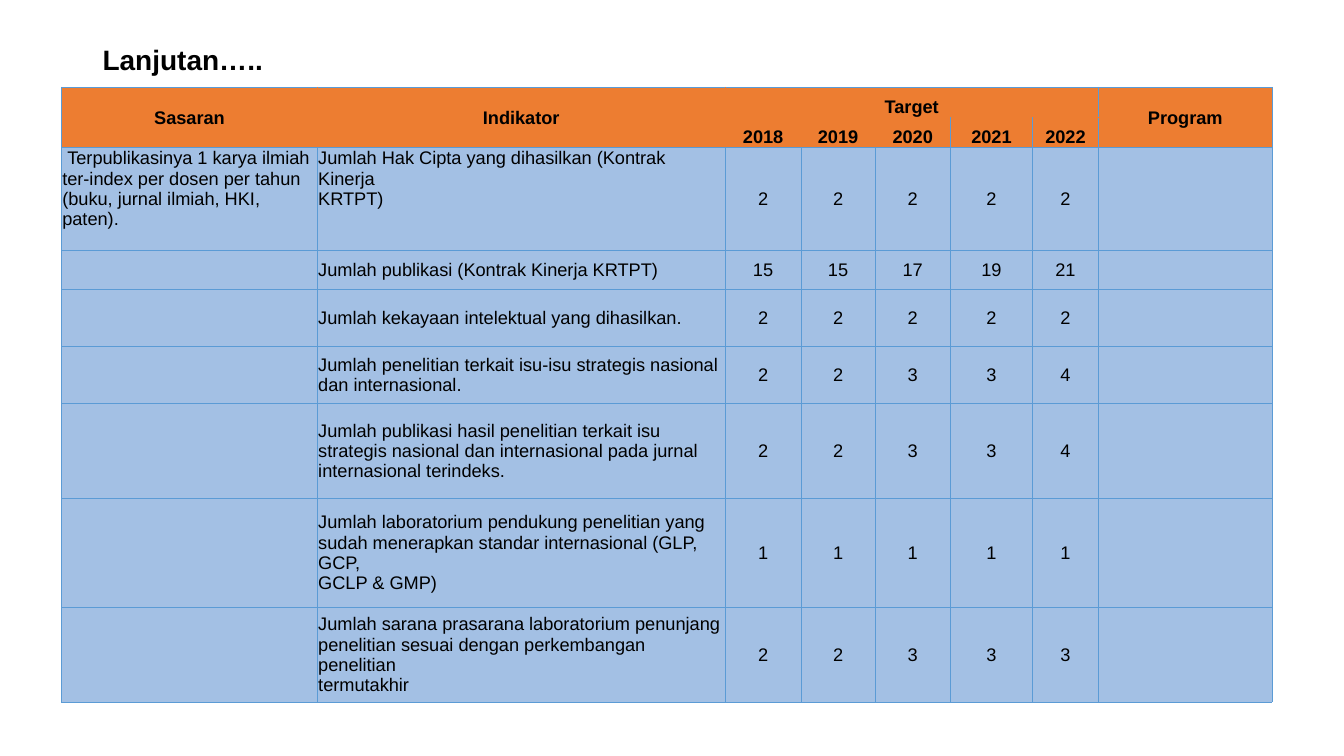
from lxml import etree
from pptx import Presentation
from pptx.dml.color import RGBColor
from pptx.enum.text import MSO_ANCHOR, PP_ALIGN
from pptx.oxml.ns import qn
from pptx.util import Cm, Pt

LEFT, CENTER = PP_ALIGN.LEFT, PP_ALIGN.CENTER
TOP, MIDDLE, BOTTOM = MSO_ANCHOR.TOP, MSO_ANCHOR.MIDDLE, MSO_ANCHOR.BOTTOM
TITLE_ONLY = 5

COLORS = {"text": "000000", "header": "ED7D31", "body": "A3C0E4", "line": "5B9BD5"}
FONT = "Arial"

COLUMN_WIDTHS = [6.45, 10.27, 1.92, 1.86, 1.9, 2.07, 1.66, 4.38]
ROW_HEIGHTS = [0.76, 0.76, 2.59, 0.97, 1.44, 1.44, 2.39, 2.75, 2.39]
HEADER_ROWS = 2
FIRST_YEAR, LAST_YEAR, PROGRAM = 2, 6, 7

GOAL = ("\u00a0Terpublikasinya 1 karya ilmiah ter-index per dosen per tahun "
        "(buku, jurnal ilmiah, HKI, paten).")
HEADERS = [
    ["Sasaran", "Indikator", "Target", "", "", "", "", "Program"],
    ["", "", "2018", "2019", "2020", "2021", "2022", ""],
]
INDICATORS = [
    ("Jumlah Hak Cipta yang dihasilkan (Kontrak Kinerja\nKRTPT)", [2, 2, 2, 2, 2]),
    ("Jumlah publikasi (Kontrak Kinerja KRTPT)", [15, 15, 17, 19, 21]),
    ("Jumlah kekayaan intelektual yang dihasilkan.", [2, 2, 2, 2, 2]),
    ("Jumlah penelitian terkait isu-isu strategis nasional\ndan internasional.",
     [2, 2, 3, 3, 4]),
    ("Jumlah publikasi hasil penelitian terkait isu\n"
     "strategis nasional dan internasional pada jurnal\n"
     "internasional terindeks.", [2, 2, 3, 3, 4]),
    ("Jumlah laboratorium pendukung penelitian yang\n"
     "sudah menerapkan standar internasional (GLP, GCP,\n"
     "GCLP & GMP)", [1, 1, 1, 1, 1]),
    ("Jumlah sarana prasarana laboratorium penunjang\n"
     "penelitian sesuai dengan perkembangan penelitian\n"
     "termutakhir", [2, 2, 3, 3, 3]),
]


def write_text(text_frame, text, size=13, bold=False, align=LEFT, spacing=None):
    paragraph = text_frame.paragraphs[0]
    paragraph.text = text
    paragraph.alignment = align
    paragraph.line_spacing = spacing
    for run in paragraph.runs:
        run.font.name = FONT
        run.font.size = Pt(size)
        run.font.bold = bold
        run.font.color.rgb = RGBColor.from_string(COLORS["text"])


def edge_colors(row, column):
    """Lines inside the header blend with its fill; all others are blue."""
    def vertical(boundary):
        last_blended = FIRST_YEAR if row == 0 else 4
        inside = row < HEADER_ROWS and 1 <= boundary <= last_blended
        return COLORS["header" if inside else "line"]

    def horizontal(boundary):
        inside = boundary == 1 and FIRST_YEAR <= column <= LAST_YEAR
        return COLORS["header" if inside else "line"]

    return {"a:lnL": vertical(column), "a:lnR": vertical(column + 1),
            "a:lnT": horizontal(row), "a:lnB": horizontal(row + 1)}


def draw_borders(cell, colors):
    properties = cell._tc.get_or_add_tcPr()
    for tag, color in colors.items():
        line = etree.SubElement(properties, qn(tag), w=str(Pt(0.5)))
        fill = etree.SubElement(line, qn("a:solidFill"))
        etree.SubElement(fill, qn("a:srgbClr"), val=color)


def format_cell(cell, text, row, column):
    is_header = row < HEADER_ROWS
    cell.margin_left = cell.margin_right = cell.margin_top = Cm(0.02)
    cell.margin_bottom = 0
    if is_header and FIRST_YEAR <= column <= LAST_YEAR:
        cell.vertical_anchor = BOTTOM
    elif row == HEADER_ROWS and column < FIRST_YEAR:
        cell.vertical_anchor = TOP
    else:
        cell.vertical_anchor = MIDDLE
    draw_borders(cell, edge_colors(row, column))
    cell.fill.solid()
    cell.fill.fore_color.rgb = RGBColor.from_string(
        COLORS["header" if is_header else "body"])
    if text:
        centered = is_header or column >= FIRST_YEAR
        write_text(cell.text_frame, text, bold=is_header,
                   align=CENTER if centered else LEFT)


def add_target_table(slide):
    body = [[GOAL if number == 0 else "", indicator, *map(str, targets), ""]
            for number, (indicator, targets) in enumerate(INDICATORS)]
    rows = HEADERS + body
    table = slide.shapes.add_table(
        len(rows), len(COLUMN_WIDTHS), Cm(1.55), Cm(2.2),
        Cm(sum(COLUMN_WIDTHS)), Cm(sum(ROW_HEIGHTS))).table
    table.first_row = table.horz_banding = False
    for column, width in zip(table.columns, COLUMN_WIDTHS):
        column.width = Cm(width)
    for row, height in zip(table.rows, ROW_HEIGHTS):
        row.height = Cm(height)

    # Header cells that span rows or columns
    for column in (0, 1, PROGRAM):
        table.cell(0, column).merge(table.cell(1, column))
    table.cell(0, FIRST_YEAR).merge(table.cell(0, LAST_YEAR))

    for row, texts in enumerate(rows):
        for column, text in enumerate(texts):
            format_cell(table.cell(row, column), text, row, column)


def add_title(slide, text):
    title = slide.shapes.title
    title.left, title.top, title.width, title.height = (
        Cm(2.33), Cm(0.7), Cm(29.21), Cm(1.68))
    title.text_frame.vertical_anchor = MIDDLE
    title.text_frame.word_wrap = True
    write_text(title.text_frame, text, size=20, bold=True, spacing=0.9)


def main():
    presentation = Presentation()
    presentation.slide_width, presentation.slide_height = Cm(33.87), Cm(19.05)
    slide = presentation.slides.add_slide(presentation.slide_layouts[TITLE_ONLY])
    add_title(slide, "Lanjutan…..")
    add_target_table(slide)
    presentation.save("out.pptx")


if __name__ == "__main__":
    main()
